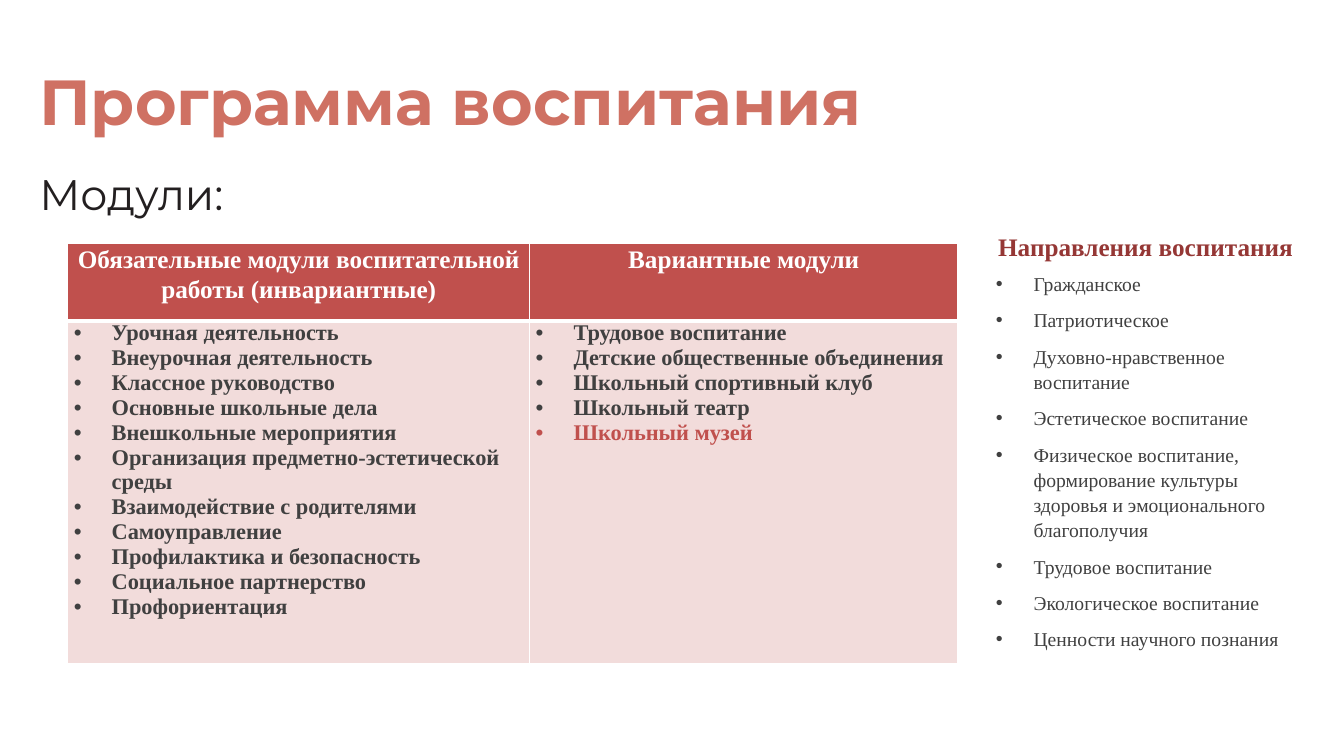
from lxml import etree
from pptx import Presentation, util as u
from pptx.dml.color import RGBColor
from pptx.enum import text as t
from pptx.oxml.ns import qn

Pt = u.Pt
SERIF = "Times New Roman"
SANS = "Montserrat"
GREY = "404040"
RED = "C0504D"
PINK = "F2DCDB"
WHITE = "FFFFFF"
INDENT = 27

CORE = [
    "Урочная деятельность",
    "Внеурочная деятельность",
    "Классное руководство",
    "Основные школьные дела",
    "Внешкольные мероприятия",
    "Организация предметно-эстетической среды",
    "Взаимодействие с родителями",
    "Самоуправление",
    "Профилактика и безопасность",
    "Социальное партнерство",
    "Профориентация",
]
EXTRA = [
    "Трудовое воспитание",
    "Детские общественные объединения",
    "Школьный спортивный клуб",
    "Школьный театр",
    "Школьный музей",
]
AIMS = [
    "Гражданское",
    "Патриотическое",
    "Духовно-нравственное воспитание",
    "Эстетическое воспитание",
    "Физическое воспитание, формирование культуры здоровья и эмоционального благополучия",
    "Трудовое воспитание",
    "Экологическое воспитание",
    "Ценности научного познания",
]


def color(code):
    return RGBColor.from_string(code)


def bullet(para):
    props = para._p.get_or_add_pPr()
    props.set("marL", str(Pt(INDENT)))
    props.set("indent", str(-Pt(INDENT)))
    etree.SubElement(props, qn("a:buFont")).set("typeface", "Arial")
    etree.SubElement(props, qn("a:buChar")).set("char", "•")


def write(frame, words, size, ink, font=SERIF, bold=False, center=False,
          line=None, after=0, dot=False):
    para = frame.paragraphs[0]
    if para.runs:
        para = frame.add_paragraph()
    para.alignment = t.PP_ALIGN.CENTER if center else t.PP_ALIGN.LEFT
    para.space_after = Pt(after)
    if line:
        para.line_spacing = line
    if dot:
        bullet(para)
    run = para.add_run()
    run.text = words
    run.font.size = Pt(size)
    run.font.name = font
    run.font.bold = bold
    run.font.color.rgb = color(ink)


def frame_at(slide, box, pad=(0, 0)):
    frame = slide.shapes.add_textbox(*map(Pt, box)).text_frame
    frame.word_wrap = True
    frame.vertical_anchor = t.MSO_ANCHOR.TOP
    frame.margin_left = frame.margin_right = Pt(pad[0])
    frame.margin_top = frame.margin_bottom = Pt(pad[1])
    return frame


def heading(slide, box):
    left, top, width, height = box
    title = frame_at(slide, (left, top, width, 70))
    write(title, "Программа воспитания", 45.5, "CF7163", font=SANS, bold=True)
    lead = frame_at(slide, (left, top + 76.2, width, height - 76.2))
    write(lead, "Модули:", 30.5, "231F20", font=SANS)


def border(cell, side, width):
    props = cell._tc.get_or_add_tcPr()
    edge = etree.SubElement(props, qn("a:ln" + side), w=str(Pt(width)))
    fill = etree.SubElement(edge, qn("a:solidFill"))
    etree.SubElement(fill, qn("a:srgbClr")).set("val", WHITE)


def style(cell, shade, edges):
    cell.margin_left = cell.margin_right = Pt(4.3)
    cell.margin_top = cell.margin_bottom = 0
    for side, width in zip("LRTB", edges):
        border(cell, side, width)
    cell.fill.solid()
    cell.fill.fore_color.rgb = color(shade)
    return cell.text_frame


def modules(slide, box):
    left, top, width, height = box
    table = slide.shapes.add_table(2, 2, *map(Pt, box)).table
    first, head = 329.9, 54.9
    for col, span in zip(table.columns, (first, width - first)):
        col.width = Pt(span)
    for row, span in zip(table.rows, (head, height - head)):
        row.height = Pt(span)
    groups = [
        ("Обязательные модули воспитательной работы (инвариантные)", CORE),
        ("Вариантные модули", EXTRA),
    ]
    for col, (name, items) in enumerate(groups):
        top_cell = style(table.cell(0, col), RED, (1, 1, 1, 3))
        write(top_cell, name, 18, WHITE, bold=True, center=True, line=1.07)
        body = style(table.cell(1, col), PINK, (1, 1, 3, 1))
        for item in items:
            ink = RED if item == "Школьный музей" else GREY
            write(body, item, 16, ink, bold=True, dot=True)


def aims(slide, box):
    frame = frame_at(slide, box, (7.2, 3.6))
    write(frame, "Направления воспитания", 18, "953735", bold=True,
          center=True, after=6)
    for item in AIMS:
        write(frame, item, 14, GREY, line=1.07, after=8, dot=True)


def main():
    deck = Presentation()
    deck.slide_width, deck.slide_height = Pt(960), Pt(540)
    slide = deck.slides.add_slide(deck.slide_layouts[6])
    heading(slide, (28.1, 44, 903.6, 124.5))
    modules(slide, (48.5, 174.2, 635.6, 299.6))
    aims(slide, (704.2, 162, 228.2, 309.6))
    deck.save("out.pptx")


if __name__ == "__main__":
    main()
